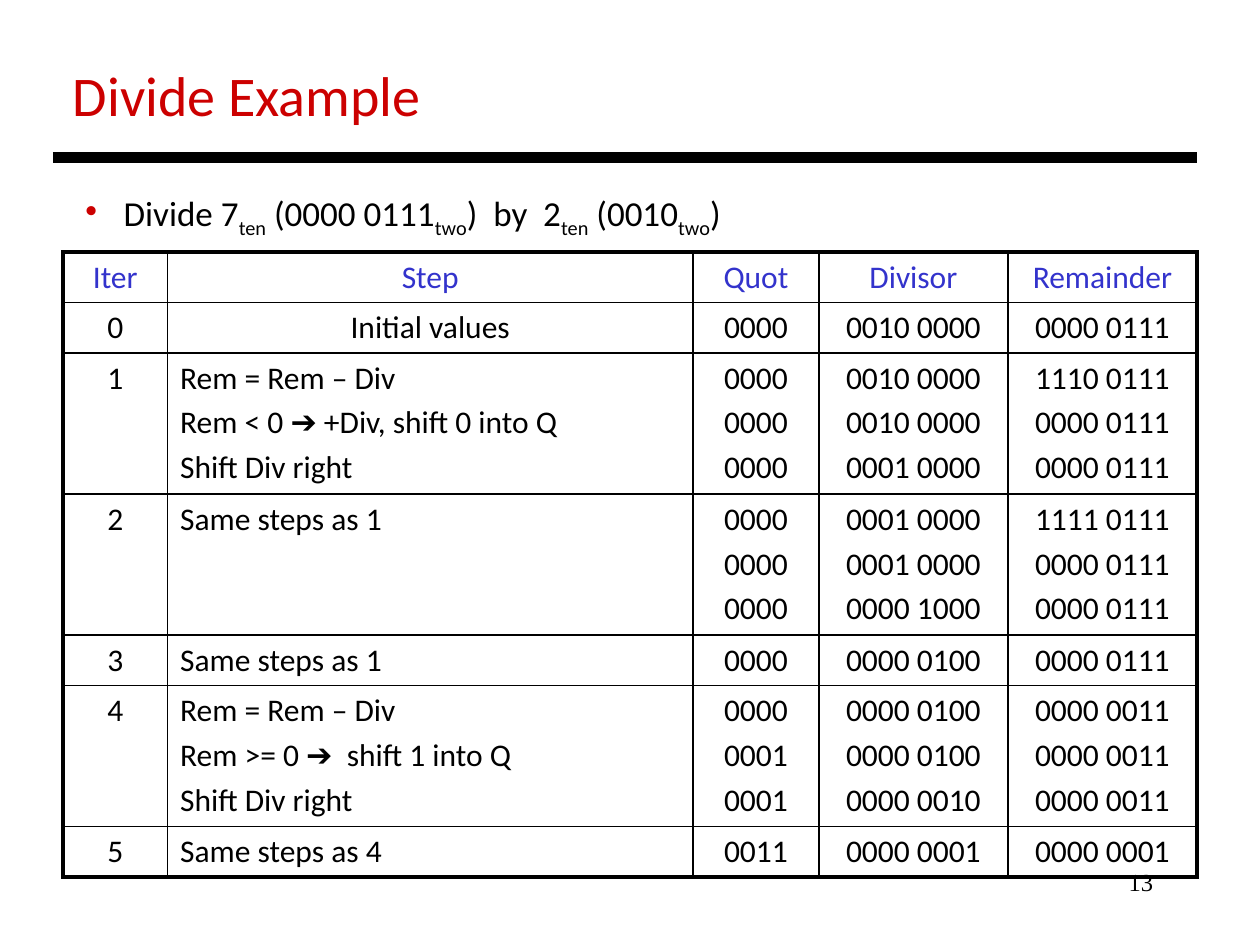
from lxml.etree import SubElement
from pptx import Presentation
from pptx.dml.color import RGBColor
from pptx.enum.shapes import MSO_CONNECTOR
from pptx.enum.text import MSO_AUTO_SIZE, PP_ALIGN
from pptx.oxml import parse_xml
from pptx.oxml.ns import nsdecls, qn
from pptx.util import Inches, Pt

COLORS = {"title": "CC0000", "header": "3333CC", "text": "000000", "line": "000000"}
FORMATS = {
    "title": {"name": "Calibri", "size": Pt(32)},
    "bullet": {"name": "Calibri", "size": Pt(20)},
    "cell": {"name": "Calibri", "size": Pt(18)},
    "number": {"name": "Times New Roman", "size": Pt(14)},
}
THIN, THICK = Pt(1), Pt(2.25)

COLUMN_WIDTHS = [0.83, 4.17, 1, 1.5, 1.5]
LINE_ROW, TALL_ROW = 0.4, 1.12
# Each cell is a list of its lines
ROWS = [
    [["Iter"], ["Step"], ["Quot"], ["Divisor"], ["Remainder"]],
    [["0"], ["Initial values"], ["0000"], ["0010 0000"], ["0000 0111"]],
    [["1"], ["Rem = Rem – Div", "Rem < 0 ➔ +Div, shift 0 into Q", "Shift Div right"],
     ["0000"] * 3, ["0010 0000", "0010 0000", "0001 0000"],
     ["1110 0111", "0000 0111", "0000 0111"]],
    [["2"], ["Same steps as 1"],
     ["0000"] * 3, ["0001 0000", "0001 0000", "0000 1000"],
     ["1111 0111", "0000 0111", "0000 0111"]],
    [["3"], ["Same steps as 1"], ["0000"], ["0000 0100"], ["0000 0111"]],
    [["4"], ["Rem = Rem – Div", "Rem >= 0 ➔  shift 1 into Q", "Shift Div right"],
     ["0000", "0001", "0001"], ["0000 0100", "0000 0100", "0000 0010"],
     ["0000 0011"] * 3],
    [["5"], ["Same steps as 4"], ["0011"], ["0000 0001"], ["0000 0001"]],
]
# Text and whether it is a subscript
BULLET_SPANS = [
    (" Divide 7", False), ("ten", True), (" (0000 0111", False), ("two", True),
    (")  by  2", False), ("ten", True), (" (0010", False), ("two", True), (")", False),
]


def add_span(para, text, style, color="text"):
    span = para.add_run()
    span.text = text
    for name, value in FORMATS[style].items():
        setattr(span.font, name, value)
    span.font.color.rgb = RGBColor.from_string(COLORS[color])
    return span


def add_text_box(page, box, wrap=False):
    frame = page.shapes.add_textbox(*map(Inches, box)).text_frame
    frame.word_wrap = wrap
    frame.auto_size = MSO_AUTO_SIZE.NONE if wrap else MSO_AUTO_SIZE.SHAPE_TO_FIT_TEXT
    return frame.paragraphs[0]


def add_page_number(page, box):
    para = add_text_box(page, box, wrap=True)
    para.alignment = PP_ALIGN.RIGHT
    add_span(para, "13", "number")


def add_title(page, box):
    add_span(add_text_box(page, box), "Divide Example", "title", "title")


def add_rule(page, left, top, width):
    start, end, y = Inches(left), Inches(left + width), Inches(top)
    rule = page.shapes.add_connector(MSO_CONNECTOR.STRAIGHT, start, y, end, y)
    rule.line.color.rgb = RGBColor.from_string(COLORS["line"])
    rule.line.width = Pt(6)
    SubElement(rule._element.spPr, qn("a:effectLst"))


def add_bullet(page, box):
    para = add_text_box(page, box)
    for text, subscript in BULLET_SPANS:
        span = add_span(para, text, "bullet")
        if subscript:
            span.font._element.set("baseline", "-25000")
    # Red bullet with a hanging indent
    properties = para._p.get_or_add_pPr()
    properties.set("marL", str(Inches(0.24)))
    properties.set("indent", str(-Inches(0.24)))
    color = SubElement(properties, qn("a:buClr"))
    SubElement(color, qn("a:srgbClr"), val=COLORS["title"])
    SubElement(properties, qn("a:buChar"), char="•")


def set_borders(cell, widths):
    properties = cell._tc.get_or_add_tcPr()
    for index, (side, width) in enumerate(widths.items()):
        properties.insert(index, parse_xml(
            f'<a:ln{side} {nsdecls("a")} w="{width}"><a:solidFill>'
            f'<a:srgbClr val="{COLORS["line"]}"/></a:solidFill></a:ln{side}>'))


def fill_cell(cell, lines, color, alignment):
    cell.fill.background()
    frame = cell.text_frame
    for index, line in enumerate(lines):
        para = frame.add_paragraph() if index else frame.paragraphs[0]
        para.alignment = alignment
        para.space_before = Pt(3.6)
        add_span(para, line, "cell", color)


def add_steps_table(page, box):
    last_row, last_column = len(ROWS) - 1, len(COLUMN_WIDTHS) - 1
    table = page.shapes.add_table(
        len(ROWS), len(COLUMN_WIDTHS), *map(Inches, box)).table
    table.first_row = table.horz_banding = False
    for column, width in zip(table.columns, COLUMN_WIDTHS):
        column.width = Inches(width)
    for r, row in enumerate(ROWS):
        tall = max(map(len, row)) > 1
        table.rows[r].height = Inches(TALL_ROW if tall else LINE_ROW)
        for c, lines in enumerate(row):
            cell = table.cell(r, c)
            is_step = c == 1 and r > 1
            fill_cell(cell, lines, "text" if r else "header",
                      PP_ALIGN.LEFT if is_step else PP_ALIGN.CENTER)
            # Thick outer frame, thin inner grid
            set_borders(cell, {
                "L": THICK if c == 0 else THIN,
                "R": THICK if c == last_column else THIN,
                "T": THICK if r == 0 else THIN,
                "B": THICK if r == last_row else THIN,
            })


def main():
    deck = Presentation()
    deck.slide_width, deck.slide_height = Inches(10), Inches(7.5)
    page = deck.slides.add_slide(deck.slide_layouts[6])
    add_page_number(page, (7.17, 6.83, 2.08, 0.5))
    add_title(page, (0.48, 0.43, 2.99, 0.64))
    add_rule(page, 0.42, 1.25, 9.08)
    add_bullet(page, (0.58, 1.47, 5.32, 0.44))
    add_steps_table(page, (0.5, 2, 9, 4.96))
    deck.save("out.pptx")


if __name__ == "__main__":
    main()
